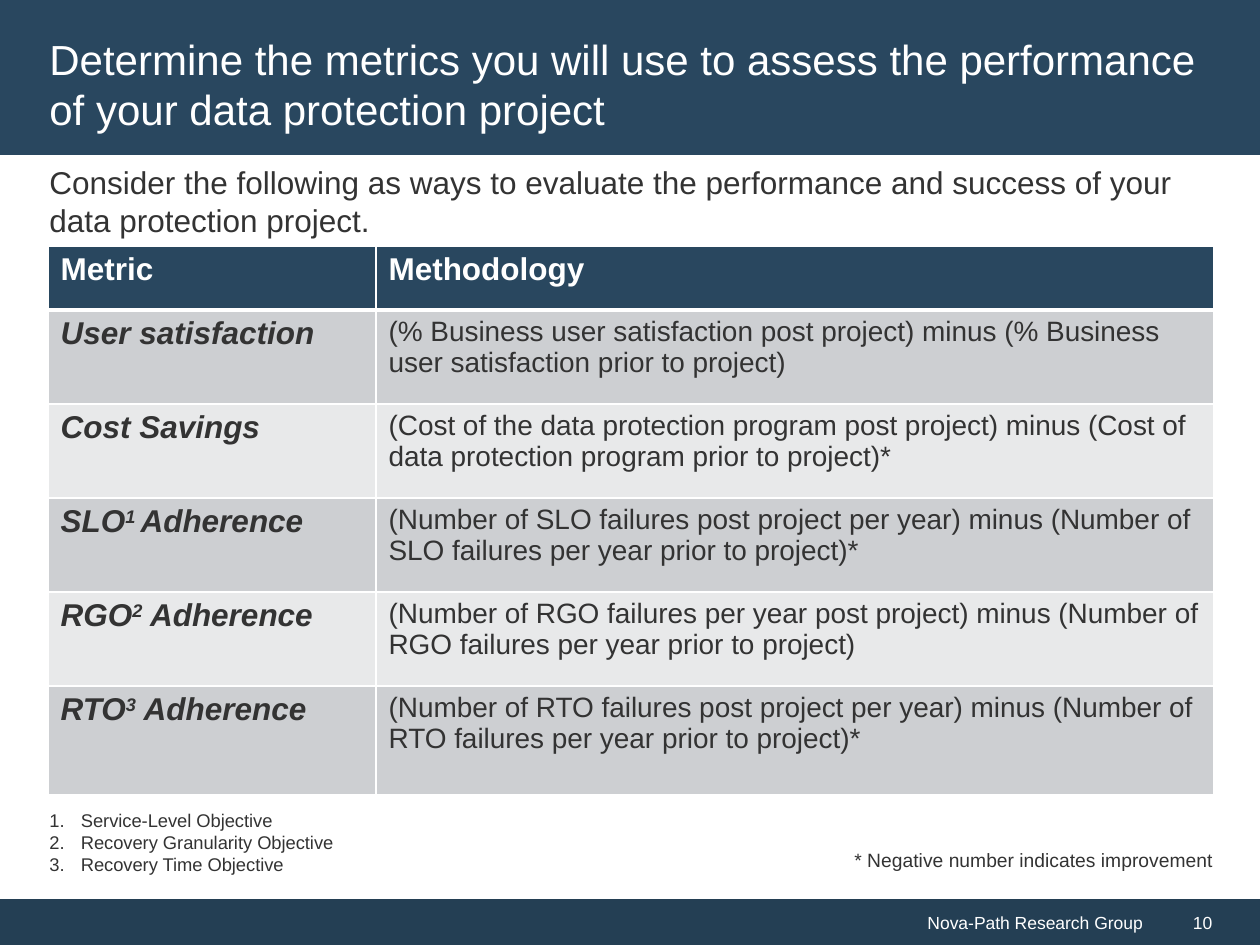
from lxml import etree
from pptx import Presentation
from pptx.dml.color import RGBColor
from pptx.enum.shapes import MSO_SHAPE
from pptx.enum.text import MSO_ANCHOR, PP_ALIGN
from pptx.oxml.ns import qn
from pptx.util import Emu, Pt

RECTANGLE = MSO_SHAPE.RECTANGLE
TOP, MIDDLE = MSO_ANCHOR.TOP, MSO_ANCHOR.MIDDLE
LEFT, RIGHT = PP_ALIGN.LEFT, PP_ALIGN.RIGHT

WHITE = RGBColor(0xFF, 0xFF, 0xFF)
INK = RGBColor(0x33, 0x33, 0x33)
NAVY = RGBColor(0x29, 0x47, 0x5F)
FOOTER_NAVY = RGBColor(0x24, 0x3F, 0x54)
BAND_DARK = RGBColor(0xCD, 0xCF, 0xD2)
BAND_LIGHT = RGBColor(0xE8, 0xE9, 0xEA)

FONT = "Arial"
PX_PER_INCH = 126
SLIDE_W, SLIDE_H = 1260, 945
COLUMNS = [328, 838]
ROWS = [64, 94, 94, 94, 94, 109]

# Text between carets is superscript.
METRICS = [
    ("User satisfaction",
     "(% Business user satisfaction post project) minus "
     "(% Business user satisfaction prior to project)"),
    ("Cost Savings",
     "(Cost of the data protection program post project) minus "
     "(Cost of data protection program prior to project)*"),
    ("SLO^1 ^Adherence",
     "(Number of SLO failures post project per year) minus "
     "(Number of SLO failures per year prior to project)*"),
    ("RGO^2^ Adherence",
     "(Number of RGO failures per year post project) minus "
     "(Number of RGO failures per year prior to project)"),
    ("RTO^3^ Adherence",
     "(Number of RTO failures post project per year) minus "
     "(Number of RTO failures per year prior to project)*"),
]
DEFINITIONS = ["Service-Level Objective", "Recovery Granularity Objective",
               "Recovery Time Objective"]


def px(length):
    return Emu(round(length * 914400 / PX_PER_INCH))


def write(frame, *lines, size=18, color=INK, bold=False, italic=False,
          align=LEFT, numbered=False):
    """Fill a text frame with one paragraph per line."""
    for index, line in enumerate(lines):
        paragraph = frame.add_paragraph() if index else frame.paragraphs[0]
        paragraph.alignment = align
        if numbered:
            number_paragraph(paragraph)
        for part, words in enumerate(line.split("^")):
            run = paragraph.add_run()
            run.text = words
            font = run.font
            font.name, font.size, font.color.rgb = FONT, Pt(size), color
            font.bold, font.italic = bold, italic
            if part % 2:
                run._r.get_or_add_rPr().set("baseline", "30000")


def number_paragraph(paragraph):
    properties = paragraph._p.get_or_add_pPr()
    properties.set("marL", "228600")
    properties.set("indent", "-228600")
    etree.SubElement(properties, qn("a:buFont"), typeface="+mj-lt")
    etree.SubElement(properties, qn("a:buAutoNum"), type="arabicPeriod")


def set_borders(cell, top, bottom):
    """Draw white cell borders; top and bottom are widths in points."""
    properties = cell._tc.get_or_add_tcPr()
    sides = [("a:lnL", 1), ("a:lnR", 1), ("a:lnT", top), ("a:lnB", bottom)]
    for index, (side, width) in enumerate(sides):
        line = etree.Element(qn(side), w=str(Pt(width)))
        fill = etree.SubElement(line, qn("a:solidFill"))
        etree.SubElement(fill, qn("a:srgbClr"), val=str(WHITE))
        properties.insert(index, line)


class SlideBuilder:
    def __init__(self, slide):
        self.shapes = slide.shapes

    def bar(self, x, y, width, height, color, text="", inset=13, align=LEFT):
        shape = self.shapes.add_shape(
            RECTANGLE, px(x), px(y), px(width), px(height))
        shape.shadow.inherit = False
        shape.fill.solid()
        shape.fill.fore_color.rgb = color
        shape.line.fill.background()
        if text:
            shape.text_frame.margin_left = px(inset)
            shape.text_frame.vertical_anchor = MIDDLE
            write(shape.text_frame, text, size=10, color=WHITE, align=align)

    def text(self, x, y, width, height, *lines, anchor=TOP, **style):
        frame = self.shapes.add_textbox(
            px(x), px(y), px(width), px(height)).text_frame
        frame.word_wrap = True
        frame.vertical_anchor = anchor
        write(frame, *lines, **style)

    def metrics_table(self, x, y):
        table = self.shapes.add_table(
            len(ROWS), len(COLUMNS), px(x), px(y),
            px(sum(COLUMNS)), px(sum(ROWS))).table
        for column, width in zip(table.columns, COLUMNS):
            column.width = px(width)
        for row, height in zip(table.rows, ROWS):
            row.height = px(height)
        for r, entries in enumerate([("Metric", "Methodology"), *METRICS]):
            header = r == 0
            band = NAVY if header else BAND_DARK if r % 2 else BAND_LIGHT
            for c, entry in enumerate(entries):
                cell = table.cell(r, c)
                cell.fill.solid()
                cell.fill.fore_color.rgb = band
                set_borders(cell, 3 if r == 1 else 1, 3 if header else 1)
                name = c == 0
                write(cell.text_frame, entry,
                      size=18 if header or name else 16,
                      color=WHITE if header else INK,
                      bold=header or name, italic=name and not header)


def main():
    deck = Presentation()
    deck.slide_width, deck.slide_height = px(SLIDE_W), px(SLIDE_H)
    page = SlideBuilder(deck.slides.add_slide(deck.slide_layouts[6]))

    page.bar(0, 899, 1155, 46, FOOTER_NAVY, "Nova-Path Research Group",
             align=RIGHT)
    page.bar(1155, 899, 105, 46, FOOTER_NAVY, "10", inset=38)
    page.bar(0, 0, SLIDE_W, 155, NAVY)
    page.text(37, 23, 1188, 121,
              "Determine the metrics you will use to assess the performance "
              "of your data protection project",
              size=24, color=WHITE, anchor=MIDDLE)
    page.metrics_table(48, 246)
    page.text(37, 157, 1167, 89,
              "Consider the following as ways to evaluate the performance "
              "and success of your data protection project.")
    page.text(37, 803, 622, 79, *DEFINITIONS, size=10.5, numbered=True)
    page.text(842, 842, 446, 36, "* Negative number indicates improvement",
              size=11)
    deck.save("out.pptx")


if __name__ == "__main__":
    main()
